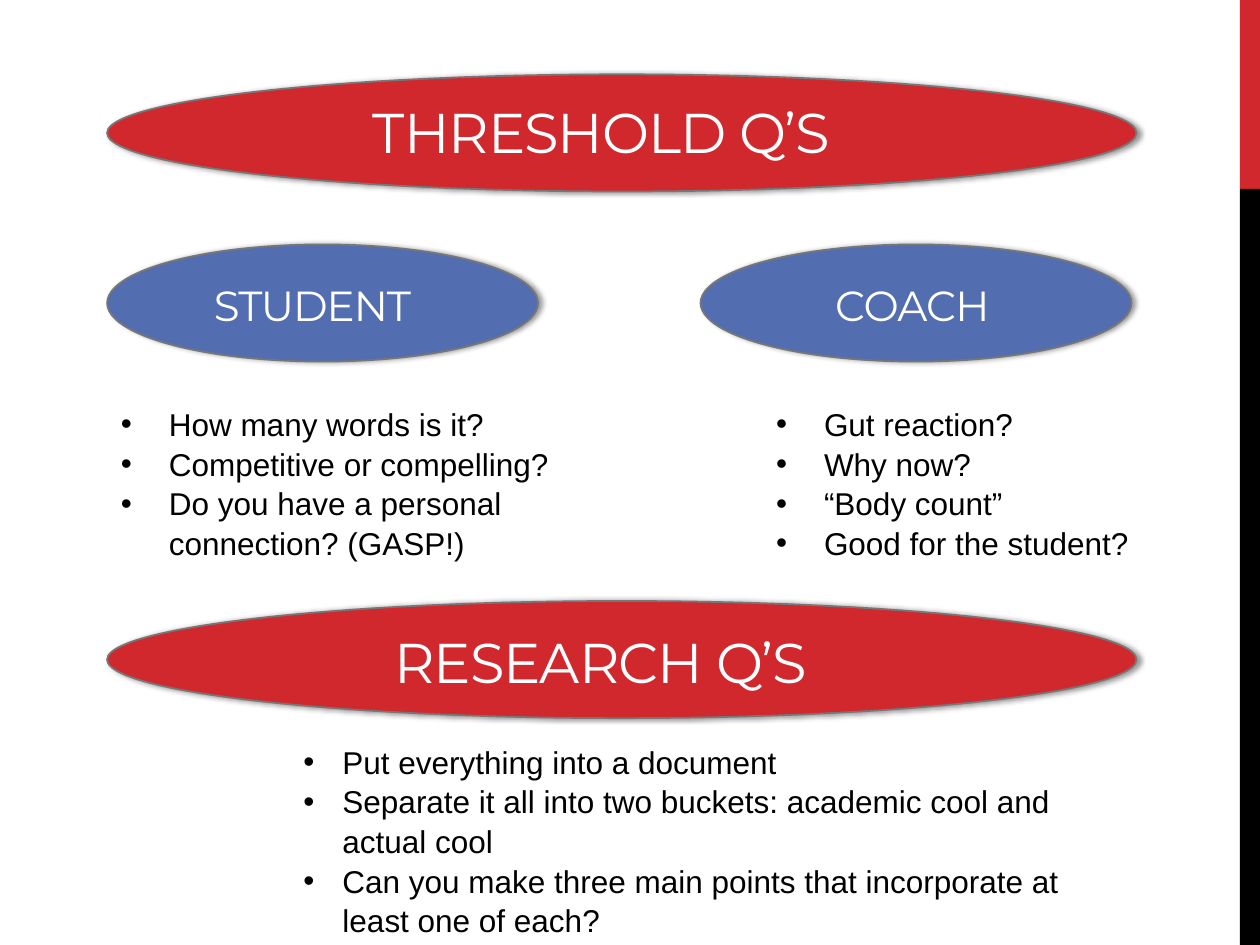
"""Build the slide of threshold and research questions."""
from lxml import etree
from pptx import Presentation
from pptx.dml.color import RGBColor
from pptx.enum.shapes import MSO_SHAPE
from pptx.enum.text import MSO_ANCHOR, MSO_AUTO_SIZE, PP_ALIGN
from pptx.oxml.ns import qn
from pptx.util import Inches, Pt

RED = RGBColor(0xD1, 0x28, 0x2E)
BLUE = RGBColor(0x52, 0x6D, 0xB0)
GRAY = RGBColor(0x77, 0x77, 0x77)
BLACK = RGBColor(0, 0, 0)
WHITE = RGBColor(0xFF, 0xFF, 0xFF)
RECTANGLE, OVAL = MSO_SHAPE.RECTANGLE, MSO_SHAPE.OVAL
TOP, BOTTOM = MSO_ANCHOR.TOP, MSO_ANCHOR.BOTTOM
LEFT = PP_ALIGN.LEFT
FIXED = MSO_AUTO_SIZE.NONE
TWO_CONTENT = 3

LEFT_EDGE, RIGHT_COLUMN = 0.85, 5.56
OVAL_HEIGHT, WIDE, NARROW = 0.93, 8.17, 3.42
STUDENT_QUESTIONS = [
    "How many words is it?",
    "Competitive or compelling?",
    "Do you have a personal connection? (GASP!)",
]
COACH_QUESTIONS = [
    "Gut reaction?",
    "Why now?",
    "“Body count”",
    "Good for the student?",
]
RESEARCH_STEPS = [
    "Put everything into a document",
    "Separate it all into two buckets: academic cool and actual cool",
    "Can you make three main points that incorporate at least one of each?",
]


def add_stripe(slide, top, height, color):
    """Add one part of the stripe along the right edge."""
    stripe = slide.shapes.add_shape(
        RECTANGLE, Inches(9.84), Inches(top), Inches(0.16), Inches(height))
    stripe.shadow.inherit = False
    stripe.fill.solid()
    stripe.fill.fore_color.rgb = color
    stripe.line.fill.background()


def add_oval(slide, left, top, width, color):
    """Add a heading oval with a soft shadow to its right."""
    oval = slide.shapes.add_shape(
        OVAL, Inches(left), Inches(top), Inches(width), Inches(OVAL_HEIGHT))
    oval.fill.solid()
    oval.fill.fore_color.rgb = color
    oval.line.color.rgb = GRAY
    oval.line.width = Pt(1)
    oval.shadow.inherit = False
    effects = oval.element.spPr.find(qn("a:effectLst"))
    shadow = etree.SubElement(
        effects, qn("a:outerShdw"), blurRad=str(Pt(3.1)), dist=str(Pt(1.8)),
        dir="0", algn="ctr", rotWithShape="0")
    tint = etree.SubElement(shadow, qn("a:srgbClr"), val=str(BLACK))
    etree.SubElement(tint, qn("a:alpha"), val="40000")


def add_box(slide):
    """Add an empty text box, to be placed when it is filled."""
    return slide.shapes.add_textbox(0, 0, 0, 0)


def place(box, left, top, width, height, anchor):
    """Place a text shape and set how its text sits inside."""
    box.left, box.top = Inches(left), Inches(top)
    box.width, box.height = Inches(width), Inches(height)
    frame = box.text_frame
    frame.word_wrap = True
    frame.auto_size = FIXED
    frame.vertical_anchor = anchor


def write(para, text, *, font, size, color, tracking=0):
    """Write one left-aligned run into a paragraph."""
    para.alignment = LEFT
    span = para.add_run()
    span.text = text
    span.font.name = font
    span.font.size = Pt(size)
    span.font.color.rgb = color
    if tracking:
        span.font._element.set("spc", str(round(tracking * 100)))


def fill_heading(box, text, left, top, width, height, size):
    """Fill a text shape with a white heading."""
    place(box, left, top, width, height, BOTTOM)
    write(box.text_frame.paragraphs[0], text, font="Montserrat", size=size,
          color=WHITE, tracking=-0.6)


def fill_list(box, items, left, top, width, margin, hanging):
    """Fill a text shape with a bulleted list."""
    place(box, left, top, width, 1.62, TOP)
    frame = box.text_frame
    for number, item in enumerate(items):
        para = frame.add_paragraph() if number else frame.paragraphs[0]
        write(para, item, font="Arial", size=18, color=BLACK)
        para.line_spacing = 1.05
        para.space_before = para.space_after = Pt(0)
        properties = para._p.get_or_add_pPr()
        properties.set("marL", str(Inches(margin)))
        properties.set("indent", str(-Inches(hanging)))
        etree.SubElement(properties, qn("a:buFont"), typeface="Arial")
        etree.SubElement(properties, qn("a:buChar"), char="•")


def main():
    """Build and save the deck."""
    deck = Presentation()
    deck.slide_width, deck.slide_height = Inches(10), Inches(7.5)
    page = deck.slides.add_slide(deck.slide_layouts[TWO_CONTENT])
    title, student_list, coach_list = list(page.placeholders)[:3]

    add_stripe(page, 0, 1.5, RED)
    add_stripe(page, 1.5, 6, BLACK)
    for top in (0.59, 4.77):
        add_oval(page, LEFT_EDGE, top, WIDE, RED)
    for left in (LEFT_EDGE, RIGHT_COLUMN):
        add_oval(page, left, 1.94, NARROW, BLUE)

    page.shapes._spTree.append(title.element)
    fill_heading(title, "THRESHOLD Q’S", 2.86, 0.61, 4.28, 0.75, 32)
    fill_heading(add_box(page), "STUDENT", 1.6, 2.18, 2.04, 0.49, 24)
    fill_heading(add_box(page), "COACH", 6.53, 2.18, 1.58, 0.49, 24)
    fill_heading(add_box(page), "RESEARCH Q’S", 3.03, 4.81, 3.94, 0.75, 32)

    fill_list(student_list, STUDENT_QUESTIONS, 0.36, 3.15, 4.23, 0.88, 0.38)
    fill_list(coach_list, COACH_QUESTIONS, RIGHT_COLUMN, 3.15, 4.23, 0.88, 0.38)
    fill_list(add_box(page), RESEARCH_STEPS, 2.31, 5.83, 6.49, 0.31, 0.31)
    deck.save("out.pptx")


if __name__ == "__main__":
    main()
